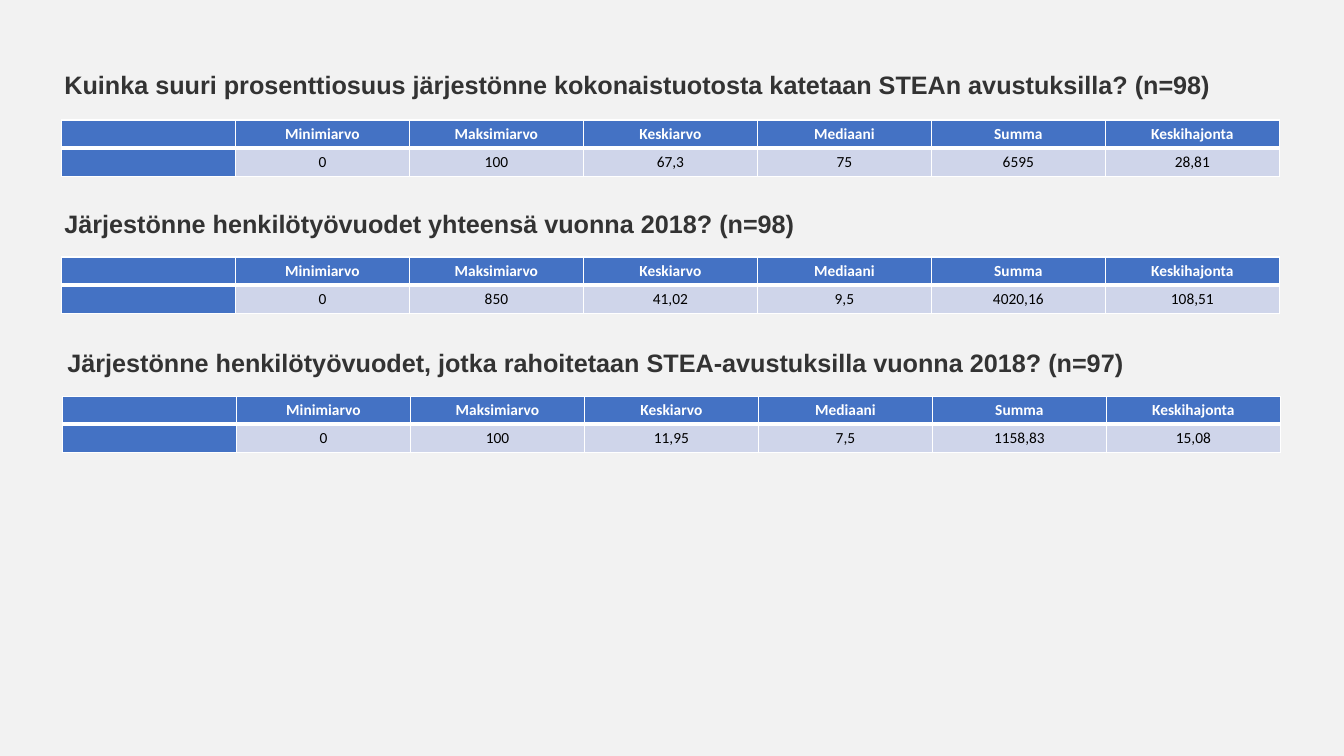
from lxml import etree
from pptx import Presentation
from pptx.dml.color import RGBColor
from pptx.enum.text import MSO_ANCHOR, MSO_AUTO_SIZE, PP_ALIGN
from pptx.oxml.ns import qn
from pptx.util import Inches, Pt

MIDDLE = MSO_ANCHOR.MIDDLE
CENTER = PP_ALIGN.CENTER
GROW = MSO_AUTO_SIZE.SHAPE_TO_FIT_TEXT

GRID_COLUMNS = 133.3
GRID_ROWS = 75
BLANK_LAYOUT = 6

MEASURES = ["", "Minimiarvo", "Maksimiarvo", "Keskiarvo", "Mediaani", "Summa", "Keskihajonta"]

QUESTIONS = [
    {
        "heading": "Kuinka suuri prosenttiosuus järjestönne kokonaistuotosta katetaan STEAn avustuksilla? (n=98)",
        "heading_place": (5.4, 6.4, 122.3, 4),
        "wrap": True,
        "table_place": (6.1, 11.9, 120.8, 5.6),
        "values": ["", "0", "100", "67,3", "75", "6595", "28,81"],
    },
    {
        "heading": "Järjestönne henkilötyövuodet yhteensä vuonna 2018? (n=98)",
        "heading_place": (5.4, 20.2, 75.2, 4),
        "wrap": False,
        "table_place": (6.1, 25.5, 120.8, 5.6),
        "values": ["", "0", "850", "41,02", "9,5", "4020,16", "108,51"],
    },
    {
        "heading": "Järjestönne henkilötyövuodet, jotka rahoitetaan STEA-avustuksilla vuonna 2018? (n=97)",
        "heading_place": (5.7, 34, 121.3, 4),
        "wrap": True,
        "table_place": (6.2, 39.3, 120.8, 5.6),
        "values": ["", "0", "100", "11,95", "7,5", "1158,83", "15,08"],
    },
]


def color(value):
    return RGBColor.from_string(value)


class SlideBuilder:
    background = "F2F2F2"
    accent = "4472C4"
    body_fill = "CFD5EA"
    border = "FFFFFF"
    heading_font = {"name": "Arial", "size": Pt(18), "bold": True, "color": "333333"}
    header_font = {"name": "Calibri", "size": Pt(11), "bold": True, "color": "FFFFFF"}
    value_font = {**header_font, "bold": False, "color": "000000"}
    cell_format = {
        "margin_left": Inches(0.07),
        "margin_right": Inches(0.07),
        "margin_top": 0,
        "margin_bottom": 0,
        "vertical_anchor": MIDDLE,
    }

    def __init__(self, deck):
        self.column = deck.slide_width / GRID_COLUMNS
        self.row = deck.slide_height / GRID_ROWS
        self.slide = deck.slides.add_slide(deck.slide_layouts[BLANK_LAYOUT])
        self.fill(self.slide.background.fill, self.background)

    def place(self, left, top, width, height):
        return (
            round(left * self.column),
            round(top * self.row),
            round(width * self.column),
            round(height * self.row),
        )

    def fill(self, target, value):
        target.solid()
        target.fore_color.rgb = color(value)

    def apply(self, target, values):
        for name, value in values.items():
            if name == "color":
                target.color.rgb = color(value)
            else:
                setattr(target, name, value)

    def add_text(self, para, text, font):
        if text:
            span = para.add_run()
            span.text = text
            self.apply(span.font, font)
        else:
            size = str(round(font["size"].pt * 100))
            etree.SubElement(para._p, qn("a:endParaRPr"), sz=size)

    def heading(self, text, place, wrap):
        box = self.slide.shapes.add_textbox(*self.place(*place))
        self.apply(box.text_frame, {"word_wrap": wrap, "auto_size": GROW})
        self.add_text(box.text_frame.paragraphs[0], text, self.heading_font)

    def borders(self, cell, widths):
        properties = cell._tc.get_or_add_tcPr()
        for side, width in widths.items():
            line = etree.SubElement(properties, qn(f"a:ln{side}"), w=str(Pt(width)))
            solid = etree.SubElement(line, qn("a:solidFill"))
            etree.SubElement(solid, qn("a:srgbClr"), val=self.border)

    def cell(self, cell, text, font, fill, widths):
        self.apply(cell, self.cell_format)
        self.borders(cell, widths)
        self.fill(cell.fill, fill)
        para = cell.text_frame.paragraphs[0]
        para.alignment = CENTER
        self.add_text(para, text, font)

    def table(self, header, values, place):
        left, top, width, height = self.place(*place)
        frame = self.slide.shapes.add_table(2, len(header), left, top, width, height)
        table = frame.table
        table.horz_banding = False
        for column in table.columns:
            column.width = width // len(header)
        for row in table.rows:
            row.height = height // 2
        for index, (measure, value) in enumerate(zip(header, values)):
            self.cell(table.cell(0, index), measure, self.header_font, self.accent,
                      {"L": 1, "R": 1, "T": 1, "B": 3})
            self.cell(table.cell(1, index), value, self.value_font,
                      self.body_fill if index else self.accent,
                      {"L": 1, "R": 1, "T": 3, "B": 1})


def main():
    deck = Presentation()
    deck.slide_width = Inches(13.33)
    deck.slide_height = Inches(7.5)
    builder = SlideBuilder(deck)
    for question in QUESTIONS:
        builder.heading(question["heading"], question["heading_place"], question["wrap"])
        builder.table(MEASURES, question["values"], question["table_place"])
    deck.save("out.pptx")


if __name__ == "__main__":
    main()
